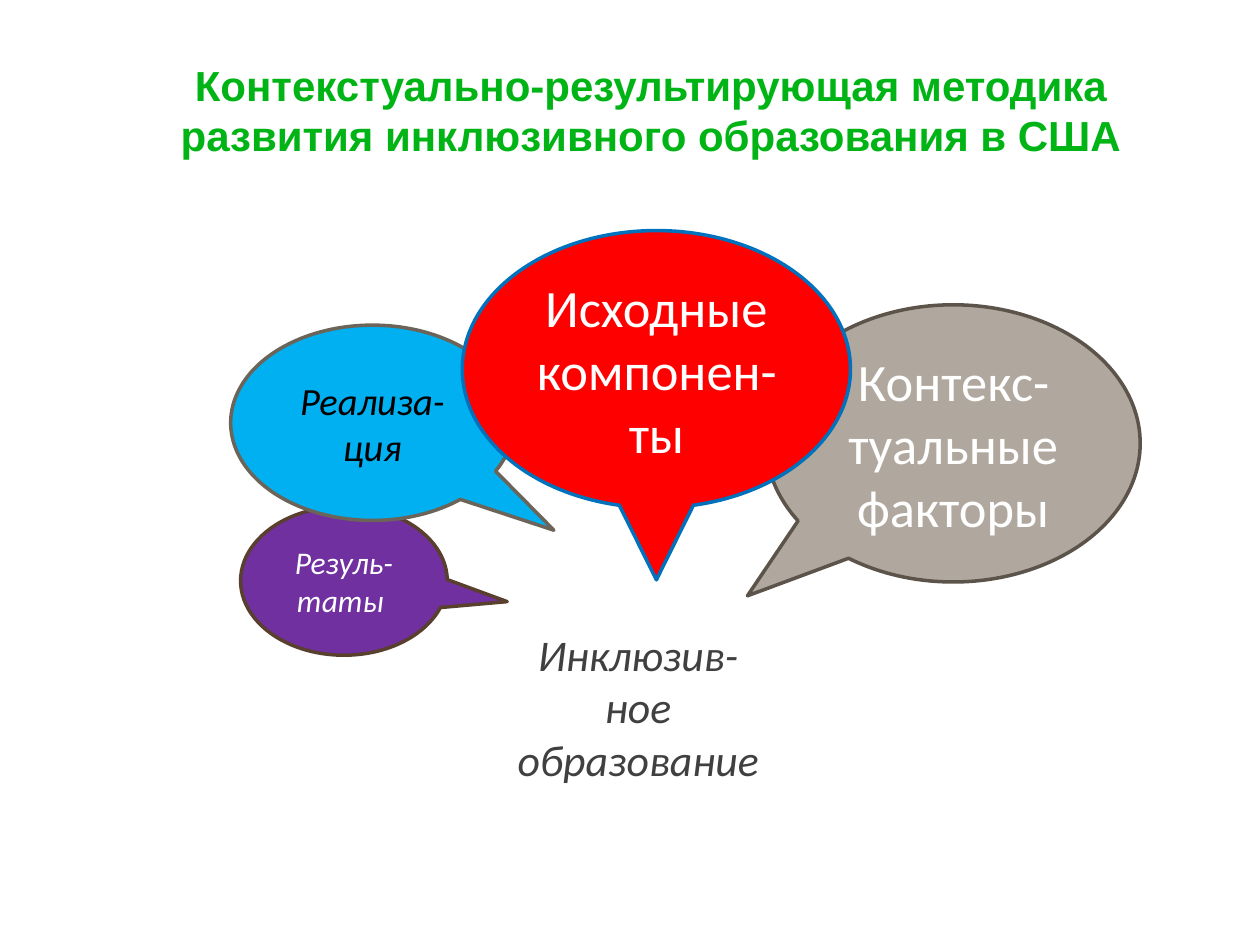
from lxml import etree
from pptx import Presentation
from pptx.dml.color import RGBColor
from pptx.enum import shapes, text
from pptx.oxml import parse_xml
from pptx.oxml.ns import nsdecls, qn
from pptx.util import Pt

WHITE = RGBColor(0xFF, 0xFF, 0xFF)
BLACK = RGBColor(0x00, 0x00, 0x00)
DARK_GREY = RGBColor(0x40, 0x40, 0x40)
GREEN = RGBColor(0x00, 0xB4, 0x15)
TAUPE = RGBColor(0xB0, 0xA8, 0x9E)
TAUPE_EDGE = RGBColor(0x5C, 0x54, 0x4B)
PURPLE = RGBColor(0x70, 0x30, 0xA0)
BROWN_EDGE = RGBColor(0x59, 0x3F, 0x2D)
SKY_BLUE = RGBColor(0x00, 0xB0, 0xF0)
GREY_EDGE = RGBColor(0x6C, 0x64, 0x58)
RED = RGBColor(0xFF, 0x00, 0x00)
BLUE_EDGE = RGBColor(0x00, 0x71, 0xBC)

# Back to front: wording, box, pointer offset, fill, edge, font format
CALLOUTS = [
    ("Контекс-туальные факторы", (437.8, 174.2, 213.8, 158.4), (-0.55, 0.55),
     TAUPE, TAUPE_EDGE, {"size": Pt(30)}),
    ("Резуль-таты ", (137.5, 289.4, 118.1, 85), (0.79, 0.14),
     PURPLE, BROWN_EDGE, {"size": Pt(18), "italic": True}),
    ("Реализа-ция", (131.8, 185.8, 162, 111.6), (0.64, 0.55),
     SKY_BLUE, GREY_EDGE, {"size": Pt(22), "italic": True, "color": BLACK}),
    ("Исходные компонен-ты", (264.2, 131.8, 221.8, 158.4), (0, 0.76),
     RED, BLUE_EDGE, {"size": Pt(30)}),
]


def write_text(shape, wording, anchor, font_format):
    frame = shape.text_frame
    frame.word_wrap = True
    frame.auto_size = text.MSO_AUTO_SIZE.NONE
    frame.vertical_anchor = anchor
    paragraph = frame.paragraphs[0]
    paragraph.alignment = text.PP_ALIGN.CENTER
    run = paragraph.add_run()
    run.text = wording
    values = {"name": "Calibri", "color": WHITE, **font_format}
    run.font.color.rgb = values.pop("color")
    for name, value in values.items():
        setattr(run.font, name, value)
    return run


def add_title(slide, wording):
    title = slide.shapes.title
    box = {"left": 72, "top": 30.2, "width": 600, "height": 65.5}
    for name, value in box.items():
        setattr(title, name, Pt(value))
    write_text(title, wording, text.MSO_ANCHOR.TOP,
               {"name": "Arial", "size": Pt(24), "bold": True, "color": GREEN})


def add_callout(slide, wording, box, pointer, fill, edge, font_format):
    shape = slide.shapes.add_shape(
        shapes.MSO_SHAPE.OVAL_CALLOUT, *map(Pt, box))
    shape.shadow.inherit = False
    shape.adjustments[0], shape.adjustments[1] = pointer
    shape.fill.solid()
    shape.fill.fore_color.rgb = fill
    shape.line.color.rgb = edge
    shape.line.width = Pt(2)
    write_text(shape, wording, text.MSO_ANCHOR.MIDDLE, font_format)


def add_text_shadow(run):
    """Give the letters of a run a soft shadow to the lower right."""
    shadow = parse_xml(
        f'<a:effectLst {nsdecls("a")}>'
        '<a:outerShdw blurRad="38100" dist="38100" dir="2700000" algn="tl">'
        '<a:srgbClr val="000000"><a:alpha val="43000"/></a:srgbClr>'
        '</a:outerShdw></a:effectLst>')
    run.font._element.find(qn("a:solidFill")).addnext(shadow)


def add_caption(slide, wording):
    caption = slide.shapes.add_textbox(*map(Pt, (282.2, 355, 164.9, 97.2)))
    run = write_text(caption, wording, text.MSO_ANCHOR.TOP,
                     {"size": Pt(25), "italic": True, "color": DARK_GREY})
    add_text_shadow(run)


def main():
    presentation = Presentation()
    presentation.slide_width, presentation.slide_height = Pt(720), Pt(540)
    slide = presentation.slides.add_slide(presentation.slide_layouts[5])
    add_title(slide, "Контекстуально-результирующая методика "
                     "развития инклюзивного образования в США")
    for callout in CALLOUTS:
        add_callout(slide, *callout)
    add_caption(slide, "Инклюзив-ное образование")
    presentation.save("out.pptx")


if __name__ == "__main__":
    main()
